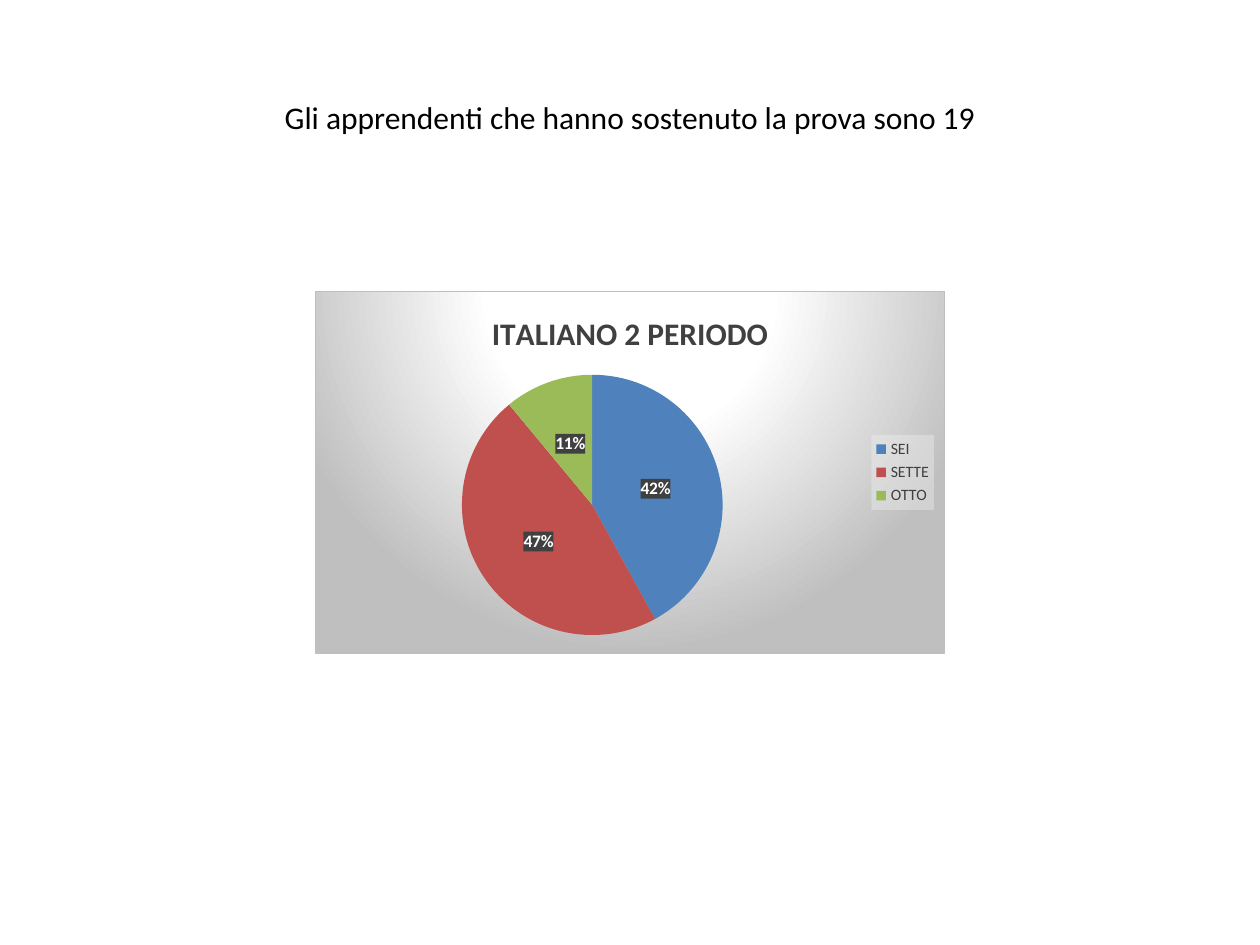
from dataclasses import dataclass

from lxml import etree
from pptx import Presentation
from pptx.chart.data import CategoryChartData
from pptx.dml.color import RGBColor
from pptx.enum.chart import XL_CHART_TYPE, XL_LABEL_POSITION, XL_LEGEND_POSITION
from pptx.enum.text import MSO_ANCHOR, PP_ALIGN
from pptx.oxml import parse_xml
from pptx.oxml.ns import nsdecls, qn
from pptx.util import Inches, Pt


@dataclass(frozen=True)
class Theme:
    font: str = "Calibri"
    black: str = "000000"
    white: str = "FFFFFF"
    dark: str = "404040"
    border: str = "BFBFBF"
    pale: str = "F2F2F2"
    slices: tuple = ("4F81BD", "C0504D", "9BBB59")
    heading_size: int = 18
    label_size: int = 10
    legend_size: int = 9


def format_font(font, name, size, color, bold=False):
    font.name, font.size, font.bold = name, Pt(size), bold
    font.color.rgb = RGBColor.from_string(color)


def write_text(frame, text, align=PP_ALIGN.CENTER, **style):
    paragraph = frame.paragraphs[0]
    paragraph.alignment = align
    run = paragraph.add_run()
    run.text = text
    format_font(run.font, **style)


def chart_fill(content):
    return parse_xml(f"<c:spPr {nsdecls('c', 'a')}>{content}</c:spPr>")


def solid(color, opacity):
    return (f'<a:solidFill><a:srgbClr val="{color}">'
            f'<a:alpha val="{opacity * 1000}"/></a:srgbClr></a:solidFill>')


class SlideBuilder:
    def __init__(self, presentation, theme):
        self.theme = theme
        self.width = presentation.slide_width
        self.height = presentation.slide_height
        self.slide = presentation.slides.add_slide(presentation.slide_layouts[5])

    def box(self, left, top, width, height):
        """Turn shares of the slide into lengths."""
        return (int(left * self.width), int(top * self.height),
                int(width * self.width), int(height * self.height))

    def title(self, text, area):
        heading = self.slide.shapes.title
        heading.left, heading.top, heading.width, heading.height = self.box(*area)
        heading.text_frame.vertical_anchor = MSO_ANCHOR.MIDDLE
        write_text(heading.text_frame, text, name=self.theme.font,
                   size=self.theme.heading_size, color=self.theme.black)

    def pie(self, heading, shares, area, plot):
        theme = self.theme
        data = CategoryChartData()
        data.categories = list(shares)
        data.add_series("Series 1", list(shares.values()))
        chart = self.slide.shapes.add_chart(
            XL_CHART_TYPE.PIE, *self.box(*area), data).chart
        format_font(chart.font, theme.font, theme.label_size, theme.black)
        chart.has_title = True
        write_text(chart.chart_title.text_frame, heading, name=theme.font,
                   size=theme.heading_size, color=theme.dark, bold=True)
        chart.chart_title.include_in_layout = False

        # Slices and their percentages
        pie = chart.plots[0]
        pie.vary_by_categories = True
        for index, color in enumerate(theme.slices):
            fill = pie.series[0].points[index].format.fill
            fill.solid()
            fill.fore_color.rgb = RGBColor.from_string(color)
        labels = pie.series[0].data_labels
        labels.show_percentage, labels.show_value = True, False
        labels.number_format, labels.number_format_is_linked = "0%", False
        labels.position = XL_LABEL_POSITION.CENTER
        format_font(labels.font, theme.font, theme.label_size, theme.white, True)

        # Legend
        chart.has_legend = True
        legend = chart.legend
        legend.position = XL_LEGEND_POSITION.RIGHT
        legend.include_in_layout = False
        format_font(legend.font, theme.font, theme.legend_size, theme.dark)

        # Backgrounds of the labels, the legend and the chart
        stops = "".join(
            f'<a:gs pos="{place * 1000}"><a:srgbClr val="{color}"/></a:gs>'
            for place, color in ((0, theme.white), (39, theme.white),
                                 (100, theme.border)))
        backdrop = (
            f'<a:gradFill><a:gsLst>{stops}</a:gsLst><a:path path="circle">'
            '<a:fillToRect l="50000" t="-80000" r="50000" b="180000"/></a:path>'
            f'</a:gradFill><a:ln w="{Pt(0.75)}"><a:solidFill>'
            f'<a:srgbClr val="{theme.border}"/></a:solidFill></a:ln>')
        for part, content in ((labels._element, solid(theme.dark, 90)),
                              (legend._element, solid(theme.pale, 39)),
                              (chart._chartSpace, backdrop)):
            part.find(qn("c:txPr")).addprevious(chart_fill(content))
        self.place_plot(chart, plot)

    def place_plot(self, chart, plot):
        plot_area = chart._chartSpace.find(f".//{qn('c:plotArea')}")
        for previous in plot_area.findall(qn("c:layout")):
            plot_area.remove(previous)
        layout = etree.Element(qn("c:layout"))
        manual = etree.SubElement(layout, qn("c:manualLayout"))
        settings = (("layoutTarget", "inner"), ("xMode", "edge"),
                    ("yMode", "edge"), *zip("xywh", plot))
        for tag, value in settings:
            etree.SubElement(manual, qn(f"c:{tag}")).set("val", str(value))
        plot_area.insert(0, layout)


def main():
    presentation = Presentation()
    presentation.slide_width, presentation.slide_height = Inches(10), Inches(7.5)
    builder = SlideBuilder(presentation, Theme())

    builder.title("Gli apprendenti che hanno sostenuto la prova sono 19",
                  area=(0.05, 0.04, 0.9, 1 / 6))
    builder.pie("ITALIANO 2 PERIODO", {"SEI": 42, "SETTE": 47, "OTTO": 11},
                area=(0.25, 0.308, 0.5, 0.384), plot=(0.23, 0.23, 0.42, 0.72))

    presentation.save("out.pptx")


if __name__ == "__main__":
    main()
